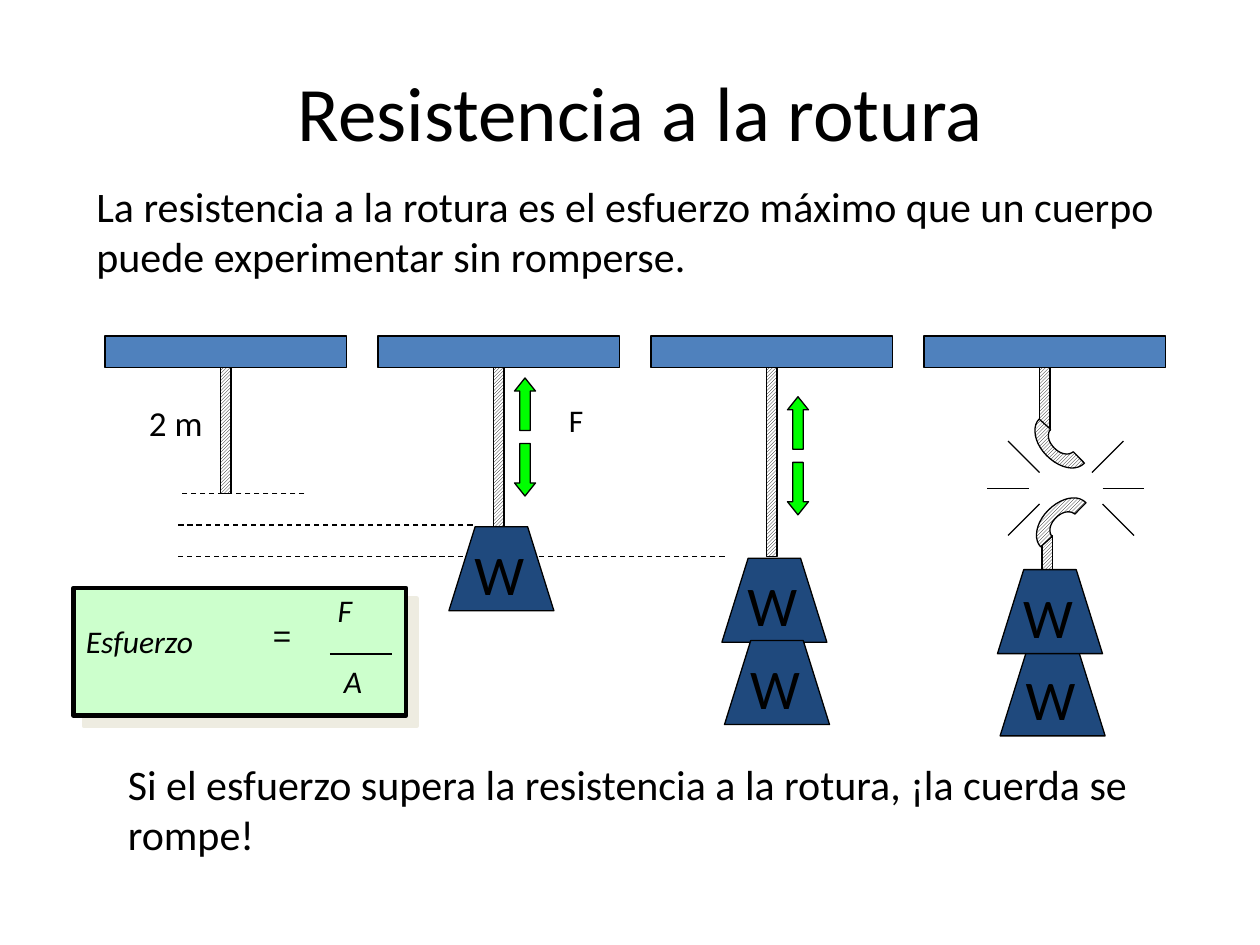
from lxml import etree
from pptx import Presentation
from pptx.dml.color import RGBColor
from pptx.enum.dml import MSO_LINE, MSO_PATTERN
from pptx.enum.shapes import MSO_CONNECTOR, MSO_SHAPE
from pptx.enum.text import MSO_ANCHOR, MSO_AUTO_SIZE, PP_ALIGN
from pptx.oxml import parse_xml
from pptx.util import Pt

STRAIGHT = MSO_CONNECTOR.STRAIGHT
RECTANGLE = MSO_SHAPE.RECTANGLE
HATCH = MSO_PATTERN.LIGHT_UPWARD_DIAGONAL
DASH = MSO_LINE.DASH
DRAWING_NS = "http://schemas.openxmlformats.org/drawingml/2006/main"

COLORS = {
    "ink": "000000",
    "paper": "FFFFFF",
    "beam": "4F81BD",
    "weight": "1F497D",
    "force": "00FF00",
    "formula": "CCFFCC",
    "shadow": "EEECE1",
}

PANEL_LEFTS = [60 + 156 * panel for panel in range(4)]
BEAM_TOP, BEAM_WIDTH, BEAM_HEIGHT = 192, 138, 18
ROPE_TOP, ROPE_WIDTH, ROPE_OFFSET = BEAM_TOP + BEAM_HEIGHT, 6, 66
BREAK_Y = 276


def color(name):
    return RGBColor.from_string(COLORS[name])


def outline(shape, width=0.75):
    shape.shadow.inherit = False
    shape.line.color.rgb = color("ink")
    shape.line.width = Pt(width)


def paint(shape, fill, width=0.75):
    outline(shape, width)
    shape.fill.solid()
    shape.fill.fore_color.rgb = color(fill)


def paint_rope(shape):
    outline(shape)
    shape.fill.patterned()
    shape.fill.pattern = HATCH
    shape.fill.fore_color.rgb = color("ink")
    shape.fill.back_color.rgb = color("paper")


def add_run(paragraph, text, size, font="Calibri", italic=None):
    run = paragraph.add_run()
    run.text = text
    run.font.name = font
    run.font.size = Pt(size)
    run.font.italic = italic
    run.font.color.rgb = color("ink")


def add_title(slide, text):
    title = slide.shapes.title
    title.left, title.top, title.width, title.height = Pt(78), Pt(18), Pt(576), Pt(90)
    title.text_frame.vertical_anchor = MSO_ANCHOR.MIDDLE
    paragraph = title.text_frame.paragraphs[0]
    paragraph.alignment = PP_ALIGN.CENTER
    add_run(paragraph, text, 44)


def add_text(slide, box, text, size, inset=7.2, wrap=True, **font):
    frame = slide.shapes.add_textbox(*map(Pt, box)).text_frame
    frame.word_wrap = wrap
    frame.auto_size = MSO_AUTO_SIZE.SHAPE_TO_FIT_TEXT
    frame.margin_left = frame.margin_right = Pt(inset)
    frame.margin_top = frame.margin_bottom = Pt(inset)
    add_run(frame.paragraphs[0], text, size, **font)


def add_preset(slide, kind, box):
    return slide.shapes.add_shape(kind, *map(Pt, box))


def add_line(slide, start, end, width=0.75, dash=None):
    line = slide.shapes.add_connector(STRAIGHT, *map(Pt, (*start, *end)))
    line.line.color.rgb = color("ink")
    line.line.width = Pt(width)
    if dash:
        line.line.dash_style = dash
    etree.SubElement(line._element.spPr, f"{{{DRAWING_NS}}}effectLst")


def add_polygon(slide, points):
    corners = [(Pt(x), Pt(y)) for x, y in points]
    builder = slide.shapes.build_freeform(*corners[0])
    builder.add_line_segments(corners[1:], close=True)
    return builder.convert_to_shape()


def add_rope(slide, left, top, length):
    paint_rope(add_preset(slide, RECTANGLE, (left, top, ROPE_WIDTH, length)))


def add_weight(slide, left, top):
    points = [(left, top + 48), (left + 15, top), (left + 45, top), (left + 60, top + 48)]
    paint(add_polygon(slide, points), "weight")
    add_text(slide, (left + 7.5, top, 48, 52.5), "W", 32)


def add_force_pair(slide, left, top):
    """Upward arrow above a downward one."""
    for kind, y in ((MSO_SHAPE.UP_ARROW, top), (MSO_SHAPE.DOWN_ARROW, top + 37.5)):
        arrow = add_preset(slide, kind, (left, y, 12, 30))
        arrow.adjustments[0], arrow.adjustments[1] = 0.5, 0.625
        paint(arrow, "force")


def bezier(p0, p1, p2, p3, steps=10):
    """Points along a cubic curve, without its first point."""
    for step in range(1, steps + 1):
        t = step / steps
        factors = ((1 - t) ** 3, 3 * t * (1 - t) ** 2, 3 * t * t * (1 - t), t ** 3)
        yield tuple(sum(f * p[axis] for f, p in zip(factors, (p0, p1, p2, p3)))
                    for axis in (0, 1))


def add_frayed_ends(slide):
    """Curled rope end below the break, and its mirror image above it."""
    inner = [(601.2, 306.7), (599, 303.8), (599.8, 299.5), (603.4, 295.9),
             (607, 292.3), (611.3, 291.5), (614.2, 293.8)]
    outer = [(620.6, 287.3), (615.6, 282.2), (606.2, 284.4), (599, 291.6),
             (591.8, 298.8), (590.4, 308.2), (594.7, 312.5)]
    curl = []
    for edge in (inner, outer):
        curl += [edge[0], *bezier(*edge[:4]), *bezier(*edge[3:])]
    mirrored = [(x - 0.9, 2 * BREAK_Y - y) for x, y in curl]
    for points in (curl, mirrored):
        paint_rope(add_polygon(slide, points))


def add_break_marks(slide):
    for start, end in (((624, 270), (642, 252)), ((630, 288), (648, 306)),
                       ((630, 279), (654, 279)), ((594, 270), (576, 252)),
                       ((594, 288), (576, 306)), ((588, 279), (564, 279))):
        add_line(slide, start, end)


def add_formula(slide):
    panel = add_preset(slide, RECTANGLE, (42, 336, 190, 73))
    paint(panel, "formula", 2.5)
    effects = panel._element.spPr.find(f"{{{DRAWING_NS}}}effectLst")
    effects.append(parse_xml(
        f'<a:outerShdw xmlns:a="{DRAWING_NS}" dist="{Pt(8.5)}" dir="2700000" '
        f'algn="ctr" rotWithShape="0"><a:srgbClr val="{COLORS["shadow"]}"/></a:outerShdw>'))
    add_line(slide, (188.5, 373.5), (224, 373.5), 1.13)
    for text, left, top, width in (("F", 193, 337.5, 17), ("Esfuerzo", 49, 355.5, 98),
                                   ("A", 196.5, 378, 17)):
        add_text(slide, (left, top, width, 34), text, 18, 0, False, italic=True)
    add_text(slide, (156, 352, 16, 34), "=", 18, 0, False, font="Arial")


def main():
    presentation = Presentation()
    presentation.slide_width, presentation.slide_height = Pt(720), Pt(540)
    slide = presentation.slides.add_slide(presentation.slide_layouts[5])

    add_title(slide, "Resistencia a la rotura")
    add_text(slide, (48, 96, 636, 72.5),
             "La resistencia a la rotura es el esfuerzo máximo que un cuerpo "
             "puede experimentar sin romperse.", 24)
    add_text(slide, (66, 426, 618, 72.5),
             "Si el esfuerzo supera la resistencia a la rotura, ¡la cuerda se rompe!", 24)

    for level, right in ((282, 174), (300, 270), (318, 414)):
        add_line(slide, (right, level), (102, level), dash=DASH)
    for left, rope_length in zip(PANEL_LEFTS, (72, 96, 108, 36)):
        paint(add_preset(slide, RECTANGLE, (left, BEAM_TOP, BEAM_WIDTH, BEAM_HEIGHT)), "beam")
        add_rope(slide, left + ROPE_OFFSET, ROPE_TOP, rope_length)

    unloaded, loaded, stretched, broken = PANEL_LEFTS
    add_text(slide, (unloaded + 18, 222, 66, 38.5), "2 m", 20)

    add_force_pair(slide, loaded + 78, 216)
    add_text(slide, (loaded + 102, 222, 24, 48), "F", 18)
    add_weight(slide, loaded + 40.5, 301)

    add_force_pair(slide, stretched + 78, 226.75)
    add_weight(slide, stretched + 40.5, 319)
    add_weight(slide, stretched + 42, 366)

    add_weight(slide, broken + 43.5, 372.5)
    add_rope(slide, broken + 67.5, 306, 24)
    add_frayed_ends(slide)
    add_weight(slide, broken + 42, 325.5)
    add_break_marks(slide)

    add_formula(slide)
    presentation.save("out.pptx")


if __name__ == "__main__":
    main()
